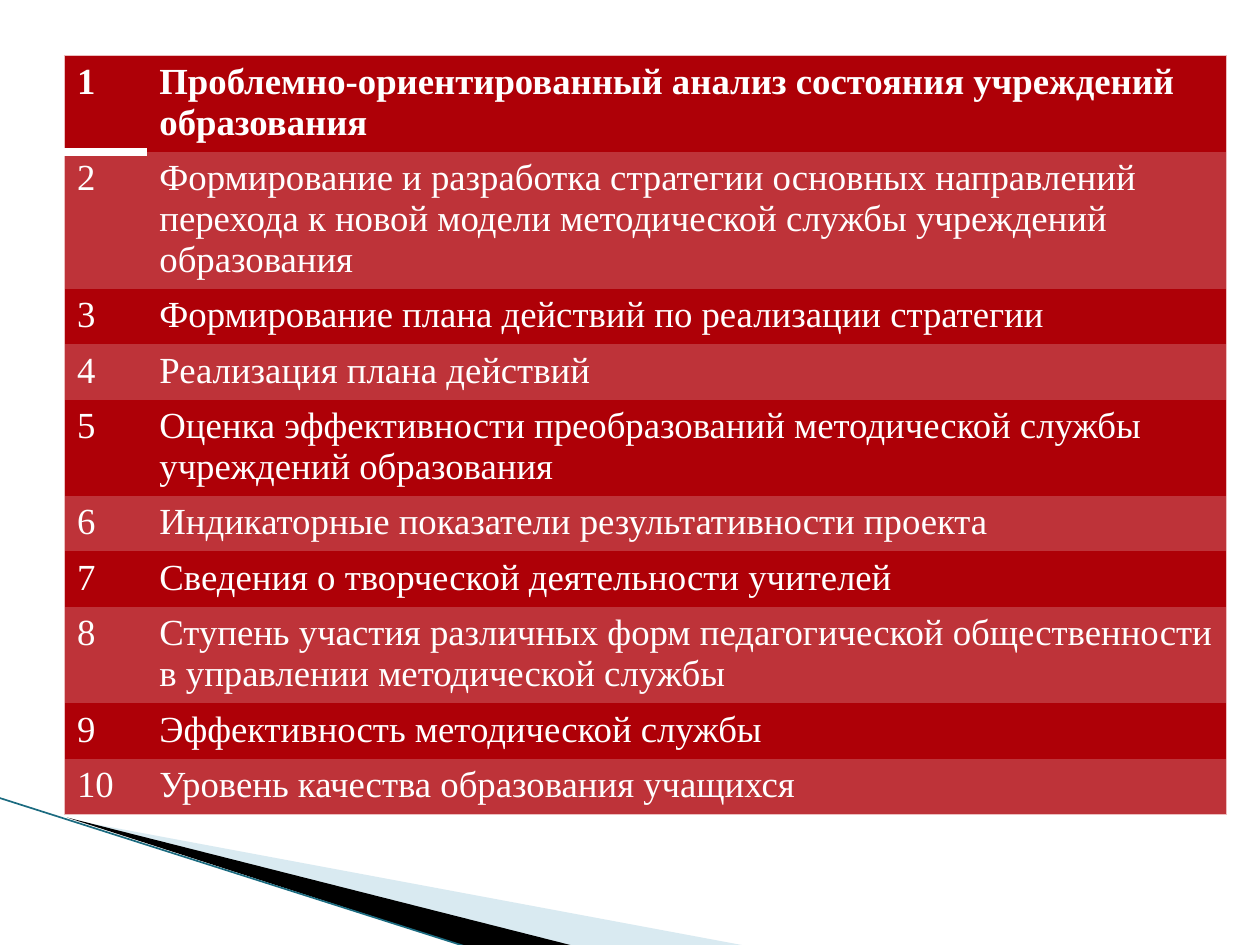
from lxml import etree
from pptx import Presentation
from pptx.dml.color import RGBColor
from pptx.enum.shapes import MSO_CONNECTOR
from pptx.oxml.ns import qn
from pptx.util import Cm, Pt

STRAIGHT = MSO_CONNECTOR.STRAIGHT
FONT = "Times New Roman"
PLAIN = "{2D5ABB26-0587-4C30-8999-92F81FD0307C}"  # no style, no grid
HEX = {"dark": "AE0007", "light": "BE3339", "edge": "EDBDBE", "white": "FFFFFF",
       "pale": "A0CBDC", "black": "000000", "teal": "1B6B80"}

STEPS = [  # text, number of lines
    ("Проблемно-ориентированный анализ состояния учреждений образования", 2),
    ("Формирование и разработка стратегии основных направлений перехода "
     "к новой модели методической службы учреждений образования", 3),
    ("Формирование плана действий по реализации стратегии", 1),
    ("Реализация плана действий", 1),
    ("Оценка эффективности преобразований методической службы "
     "учреждений образования", 2),
    ("Индикаторные показатели результативности проекта", 1),
    ("Сведения о творческой деятельности учителей", 1),
    ("Ступень участия различных форм педагогической общественности "
     "в управлении методической службы", 2),
    ("Эффективность методической службы", 1),
    ("Уровень качества образования учащихся", 1),
]


def color(name):
    return RGBColor.from_string(HEX[name])


def write(frame, text, size=21, bold=False, ink="white"):
    run = frame.paragraphs[0].add_run()
    run.text = text
    font = run.font
    font.name, font.size, font.bold = FONT, Pt(size), bold
    font.color.rgb = color(ink)


def border(cell, sides):
    props = cell._tc.get_or_add_tcPr()
    for side in "LRTB":  # order set by the schema
        if side in sides:
            ink, width = sides[side]
            line = etree.SubElement(props, qn(f"a:ln{side}"), w=str(Pt(width)))
            fill = etree.SubElement(line, qn("a:solidFill"))
            etree.SubElement(fill, qn("a:srgbClr"), val=HEX[ink])


class Deck:
    def __init__(self, slide):
        self.shapes = slide.shapes

    def wedge(self, points, fill, alpha=100):
        first, *rest = [(Cm(x), Cm(y)) for x, y in points]
        pen = self.shapes.build_freeform(*first)
        pen.add_line_segments(rest, close=True)
        shape = pen.convert_to_shape()
        shape.shadow.inherit = False
        shape.line.fill.background()
        shape.fill.solid()
        shape.fill.fore_color.rgb = color(fill)
        if alpha < 100:
            tint = shape._element.spPr.find(".//" + qn("a:srgbClr"))
            etree.SubElement(tint, qn("a:alpha"), val=str(alpha * 1000))

    def line(self, start, end, ink, width):
        rule = self.shapes.add_connector(STRAIGHT, *map(Cm, start + end))
        rule.line.color.rgb = color(ink)
        rule.line.width = Pt(width)
        etree.SubElement(rule._element.spPr, qn("a:effectLst"))

    def table(self, left, top, widths, steps):
        heights = [0.3 + 0.82 * lines for _, lines in steps]
        box = self.shapes.add_table(len(steps), len(widths), Cm(left), Cm(top),
                                    Cm(sum(widths)), Cm(sum(heights)))
        grid = box.table
        grid._tbl.tblPr.find(qn("a:tableStyleId")).text = PLAIN
        for col, width in zip(grid.columns, widths):
            col.width = Cm(width)
        edge, last = ("edge", 0.75), len(steps) - 1
        for row, (text, _) in enumerate(steps):
            grid.rows[row].height = Cm(heights[row])
            for col, words in enumerate((str(row + 1), text)):
                cell = grid.cell(row, col)
                sides = {"R" if col else "L": edge}
                if row == 0:
                    sides["T"] = edge
                    if col == 0:
                        sides["B"] = ("white", 5)
                if row == last:
                    sides["B"] = edge
                border(cell, sides)
                cell.fill.solid()
                cell.fill.fore_color.rgb = color("light" if row % 2 else "dark")
                write(cell.text_frame, words, bold=row == 0)


def main():
    prs = Presentation()
    prs.slide_width, prs.slide_height = Cm(25.4), Cm(19.05)
    deck = Deck(prs.slides.add_slide(prs.slide_layouts[6]))

    # Corner wedges
    deck.wedge([(1.4, 16.52), (15.11, 19.08), (11.58, 19.08)], "pale", alpha=40)
    deck.wedge([(1.35, 16.48), (11.61, 19.08), (9.45, 19.1)], "black")
    deck.line((-0.03, 16.08), (9.45, 19.1), "teal", 0.95)

    # Steps of the project
    deck.table(1.3, 1.12, (1.66, 21.76), STEPS)

    prs.save("out.pptx")


if __name__ == "__main__":
    main()
